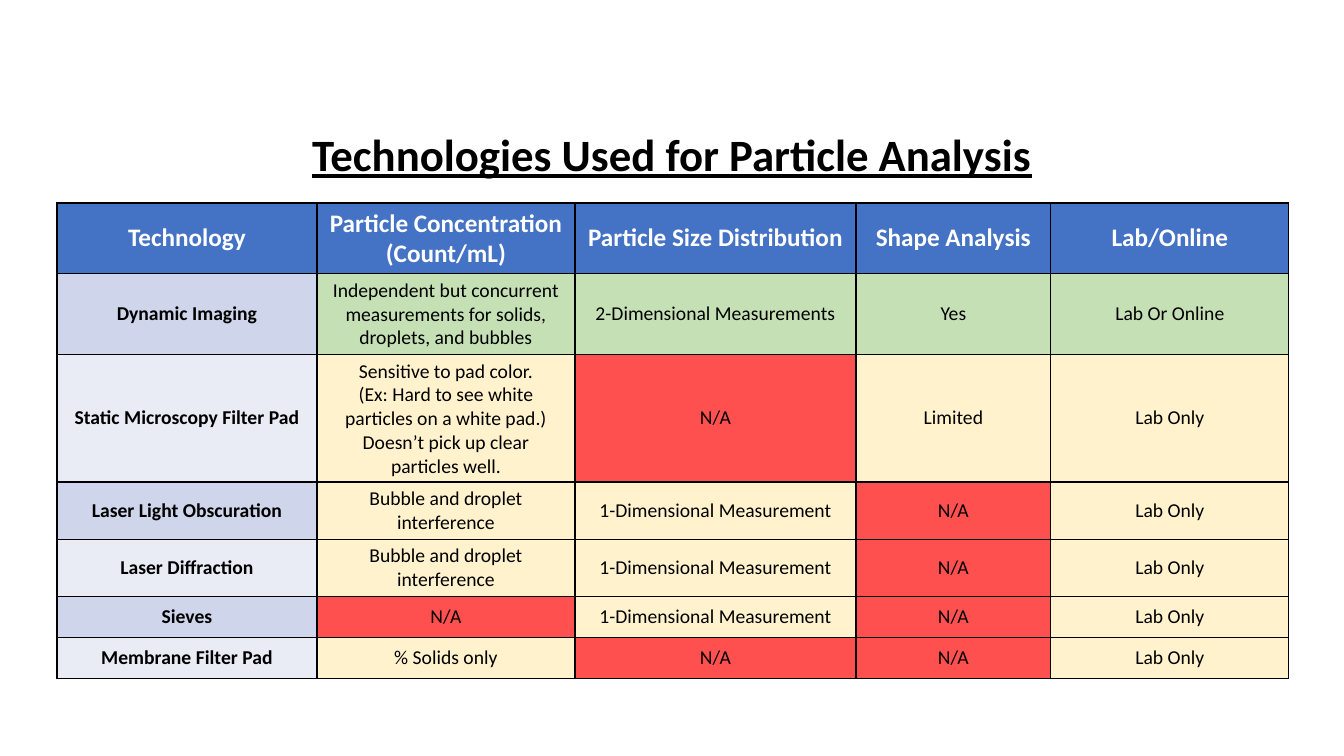
from lxml import etree
from pptx import Presentation
from pptx.dml.color import RGBColor
from pptx.enum.text import MSO_ANCHOR, MSO_AUTO_SIZE, PP_ALIGN
from pptx.oxml.ns import qn
from pptx.util import Emu, Pt

CENTER = PP_ALIGN.CENTER
TOP = MSO_ANCHOR.TOP
MIDDLE = MSO_ANCHOR.MIDDLE
GROW = MSO_AUTO_SIZE.SHAPE_TO_FIT_TEXT

EMU_PER_PX = 914400 / 100.8
SLIDE_WIDTH, SLIDE_HEIGHT = 1344, 756
TITLE_ONLY = 5
FONT = "Calibri"

COLORS = {
    "black": "000000",
    "white": "FFFFFF",
    "header": "4472C4",
    "odd_name": "CFD5EA",
    "even_name": "E9EBF5",
    "good": "C5E0B4",
    "partial": "FFF2CC",
    "missing": "FF5050",
}

COLUMN_WIDTHS = [260, 258, 281, 195, 238]
ROW_HEIGHT = 41
BEST_TECHNOLOGY = "Dynamic Imaging"

HEADERS = ["Technology", "Particle Concentration (Count/mL)",
           "Particle Size Distribution", "Shape Analysis", "Lab/Online"]
TECHNOLOGIES = [
    [BEST_TECHNOLOGY,
     "Independent but concurrent measurements for solids, droplets, and bubbles",
     "2-Dimensional Measurements", "Yes", "Lab Or Online"],
    ["Static Microscopy Filter Pad",
     "Sensitive to pad color.\v(Ex: Hard to see white particles on a white pad.)"
     "\vDoesn’t pick up clear particles well.",
     "N/A", "Limited", "Lab Only"],
    ["Laser Light Obscuration", "Bubble and droplet interference",
     "1-Dimensional Measurement", "N/A", "Lab Only"],
    ["Laser Diffraction", "Bubble and droplet interference",
     "1-Dimensional Measurement", "N/A", "Lab Only"],
    ["Sieves", "N/A", "1-Dimensional Measurement", "N/A", "Lab Only"],
    ["Membrane Filter Pad", "% Solids only", "N/A", "N/A", "Lab Only"],
]


def px(length):
    return Emu(round(length * EMU_PER_PX))


def rgb(name):
    return RGBColor.from_string(COLORS[name])


def write_centered(frame, text, size, color, bold, underline=False):
    paragraph = frame.paragraphs[0]
    paragraph.text = text
    paragraph.alignment = CENTER
    for run in paragraph.runs:
        run.font.name = FONT
        run.font.size = Pt(size)
        run.font.bold = bold
        run.font.underline = underline
        run.font.color.rgb = rgb(color)


def add_title(slide, text):
    title = slide.shapes.title
    title.left, title.top = px(0), px(122)
    title.width, title.height = px(SLIDE_WIDTH), px(64)
    frame = title.text_frame
    frame.word_wrap = True
    frame.auto_size = GROW
    frame.vertical_anchor = TOP
    write_centered(frame, text, 32, "black", bold=True, underline=True)


def border_cell(cell):
    """Draw a thin black line on all four sides, ahead of the cell's fill."""
    properties = cell._tc.get_or_add_tcPr()
    for index, side in enumerate(("a:lnL", "a:lnR", "a:lnT", "a:lnB")):
        line = etree.Element(qn(side), w=str(Pt(1)))
        fill = etree.SubElement(line, qn("a:solidFill"))
        etree.SubElement(fill, qn("a:srgbClr"), val=COLORS["black"])
        properties.insert(index, line)


def rating_color(technology, value):
    if value == "N/A":
        return "missing"
    return "good" if technology == BEST_TECHNOLOGY else "partial"


def fill_cell(cell, text, fill, size=14, color="black", bold=False):
    cell.fill.solid()
    cell.fill.fore_color.rgb = rgb(fill)
    cell.vertical_anchor = MIDDLE
    write_centered(cell.text_frame, text, size, color, bold)
    border_cell(cell)


def add_comparison_table(slide):
    row_count = len(TECHNOLOGIES) + 1
    frame = slide.shapes.add_table(
        row_count, len(HEADERS), px(57), px(203),
        px(sum(COLUMN_WIDTHS)), px(row_count * ROW_HEIGHT))
    table = frame.table
    for column, width in zip(table.columns, COLUMN_WIDTHS):
        column.width = px(width)
    for column, header in enumerate(HEADERS):
        fill_cell(table.cell(0, column), header, "header", 18, "white", True)
    for row, (technology, *ratings) in enumerate(TECHNOLOGIES, start=1):
        name_fill = "odd_name" if row % 2 else "even_name"
        fill_cell(table.cell(row, 0), technology, name_fill, bold=True)
        for column, rating in enumerate(ratings, start=1):
            fill_cell(table.cell(row, column), rating,
                      rating_color(technology, rating))
    # The rows grow with their text, so the frame is taller than their minimum.
    frame.height = px(475)


def main():
    presentation = Presentation()
    presentation.slide_width = px(SLIDE_WIDTH)
    presentation.slide_height = px(SLIDE_HEIGHT)
    slide = presentation.slides.add_slide(presentation.slide_layouts[TITLE_ONLY])
    add_title(slide, "Technologies Used for Particle Analysis")
    add_comparison_table(slide)
    presentation.save("out.pptx")


if __name__ == "__main__":
    main()
